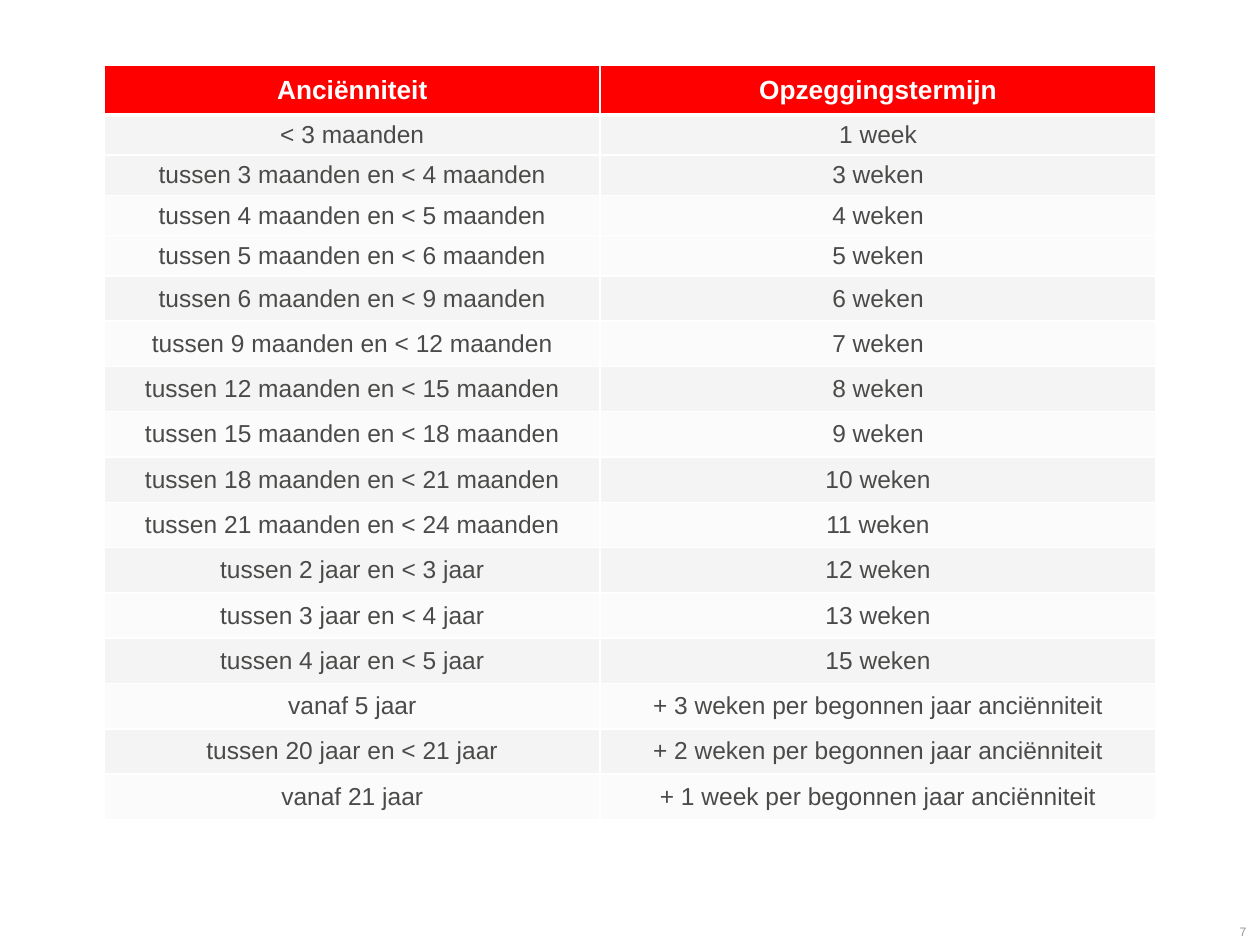
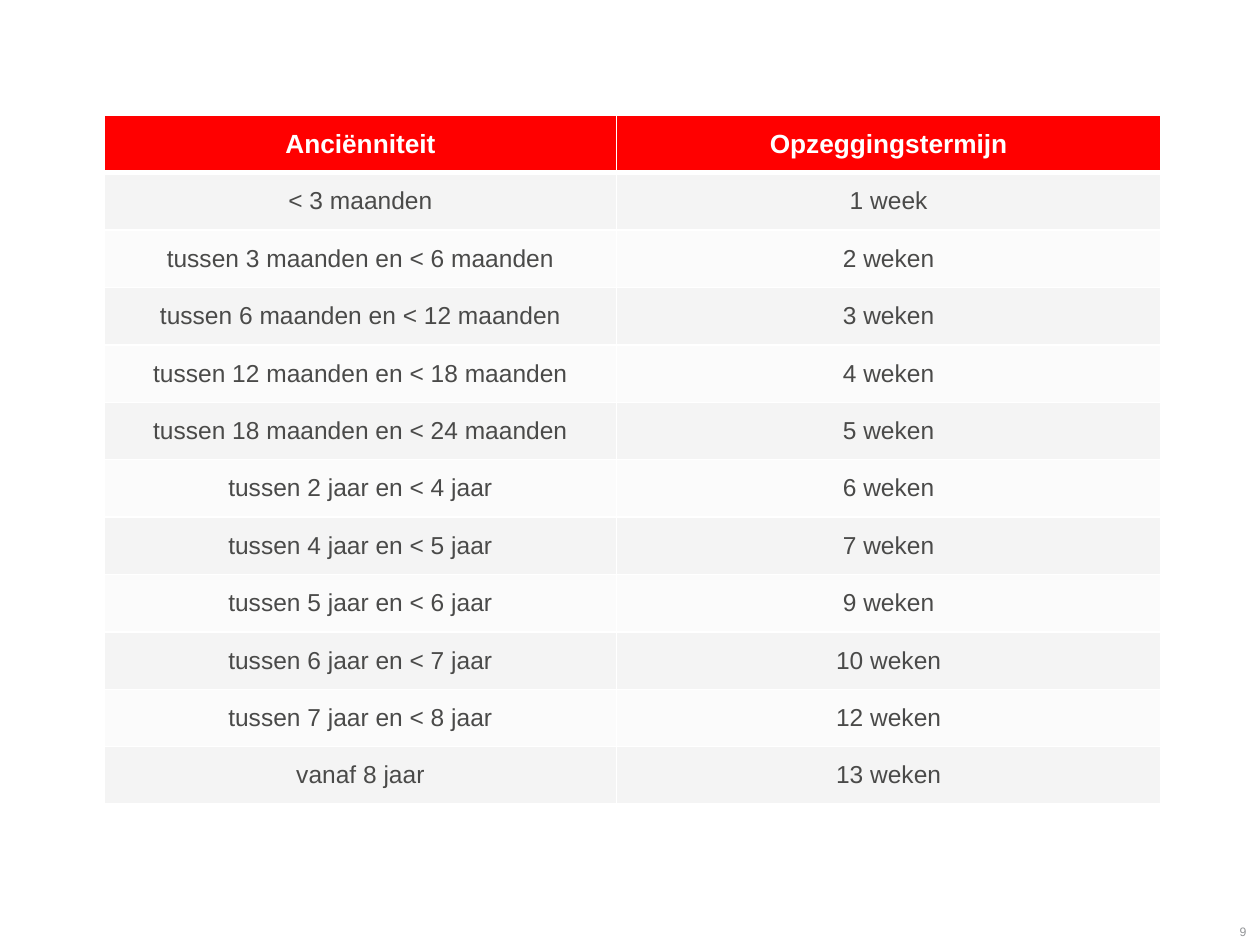
from dataclasses import dataclass

from lxml.etree import SubElement
from pptx import Presentation
from pptx.dml.color import RGBColor
from pptx.enum.text import MSO_ANCHOR, PP_ALIGN
from pptx.oxml.ns import qn
from pptx.util import Pt


@dataclass(frozen=True)
class Theme:
    font: str = "Arial"
    red: str = "FF0000"
    white: str = "FFFFFF"
    text: str = "4A4A49"
    muted: str = "929497"
    bands: tuple = ("F4F4F4", "FBFBFB")
    header_size: int = 15
    body_size: int = 14
    number_size: int = 7
    rule: int = 1
    header_rule: int = 3


THEME = Theme()
HEADERS = ("Anciënniteit", "Opzeggingstermijn")

TERMS_TO_21_YEARS = [
    ("< 3 maanden", "1 week"),
    ("tussen 3 maanden en < 4 maanden", "3 weken"),
    ("tussen 4 maanden en < 5 maanden", "4 weken"),
    ("tussen 5 maanden en < 6 maanden", "5 weken"),
    ("tussen 6 maanden en < 9 maanden", "6 weken"),
    ("tussen 9 maanden en < 12 maanden", "7 weken"),
    ("tussen 12 maanden en < 15 maanden", "8 weken"),
    ("tussen 15 maanden en < 18 maanden", "9 weken"),
    ("tussen 18 maanden en < 21 maanden", "10 weken"),
    ("tussen 21 maanden en < 24 maanden", "11 weken"),
    ("tussen 2 jaar en < 3 jaar", "12 weken"),
    ("tussen 3 jaar en < 4 jaar", "13 weken"),
    ("tussen 4 jaar en < 5 jaar", "15 weken"),
    ("vanaf 5 jaar", "+ 3 weken per begonnen jaar anciënniteit"),
    ("tussen 20 jaar en < 21 jaar", "+ 2 weken per begonnen jaar anciënniteit"),
    ("vanaf 21 jaar", "+ 1 week per begonnen jaar anciënniteit"),
]

TERMS_TO_8_YEARS = [
    ("< 3 maanden", "1 week"),
    ("tussen 3 maanden en < 6 maanden", "2 weken"),
    ("tussen 6 maanden en < 12 maanden", "3 weken"),
    ("tussen 12 maanden en < 18 maanden", "4 weken"),
    ("tussen 18 maanden en < 24 maanden", "5 weken"),
    ("tussen 2 jaar en < 4 jaar", "6 weken"),
    ("tussen 4 jaar en < 5 jaar", "7 weken"),
    ("tussen 5 jaar en < 6 jaar", "9 weken"),
    ("tussen 6 jaar en < 7 jaar", "10 weken"),
    ("tussen 7 jaar en < 8 jaar", "12 weken"),
    ("vanaf 8 jaar", "13 weken"),
]


def write(tf, text, align, size, color, bold=False):
    p = tf.paragraphs[0]
    p.alignment = align
    r = p.add_run()
    r.text = text
    for name, value in {"name": THEME.font, "size": Pt(size), "bold": bold}.items():
        setattr(r.font, name, value)
    r.font.color.rgb = RGBColor.from_string(color)


def set_borders(cell, top, bottom):
    """White rules on all four sides; call before the fill is set."""
    widths = {"lnL": THEME.rule, "lnR": THEME.rule, "lnT": top, "lnB": bottom}
    tc_pr = cell._tc.get_or_add_tcPr()
    for tag, width in widths.items():
        ln = SubElement(tc_pr, qn(f"a:{tag}"), w=str(Pt(width)))
        fill = SubElement(ln, qn("a:solidFill"))
        SubElement(fill, qn("a:srgbClr"), val=THEME.white)


def style_cell(cell, fill, top, bottom):
    set_borders(cell, top, bottom)
    cell.fill.solid()
    cell.fill.fore_color.rgb = RGBColor.from_string(fill)
    layout = {"margin_top": 0, "margin_bottom": 0,
              "vertical_anchor": MSO_ANCHOR.MIDDLE}
    for name, value in layout.items():
        setattr(cell, name, value)


def add_terms_table(s, left, top, widths, heights, terms, paired_rows):
    """Two-column table; the first paired_rows share a band two by two."""
    rows = [HEADERS, *terms]
    table = s.shapes.add_table(len(rows), len(widths), Pt(left), Pt(top),
                               Pt(sum(widths)), Pt(sum(heights))).table
    for column, width in zip(table.columns, widths):
        column.width = Pt(width)
    for i, (texts, height) in enumerate(zip(rows, heights)):
        table.rows[i].height = Pt(height)
        if i == 0:
            fill, size, color = THEME.red, THEME.header_size, THEME.white
        else:
            n = i - 1
            band = n // 2 if n < paired_rows else n
            fill, size, color = THEME.bands[band % 2], THEME.body_size, THEME.text
        above = THEME.header_rule if i == 1 else THEME.rule
        below = THEME.header_rule if i == 0 else THEME.rule
        for j, text in enumerate(texts):
            cell = table.cell(i, j)
            style_cell(cell, fill, above, below)
            write(cell.text_frame, text, PP_ALIGN.CENTER, size, color, bold=i == 0)


def add_slide_number(s, left, top, width, height, number):
    tf = s.shapes.add_textbox(Pt(left), Pt(top), Pt(width), Pt(height)).text_frame
    tf.word_wrap = True
    tf.vertical_anchor = MSO_ANCHOR.BOTTOM
    write(tf, str(number), PP_ALIGN.RIGHT, THEME.number_size, THEME.muted)


def add_terms_slide(prs, number, top, widths, heights, terms, paired_rows=0):
    s = prs.slides.add_slide(prs.slide_layouts[6])
    add_terms_table(s, 59.6, top, widths, heights, terms, paired_rows)
    add_slide_number(s, 683.3, 511.2, 36, 28.8, number)


def main():
    prs = Presentation()
    prs.slide_width, prs.slide_height = Pt(720), Pt(540)

    # Table with four short rows, then regular ones
    add_terms_slide(prs, 7, 37.5, (283.4, 317.5),
                    [28.2] + [23] * 4 + [25.9] * 12, TERMS_TO_21_YEARS, paired_rows=4)

    # Table with equal rows
    add_terms_slide(prs, 9, 65.9, (292.7, 311), [32.8] * 12, TERMS_TO_8_YEARS)

    prs.save("out.pptx")


if __name__ == "__main__":
    main()
